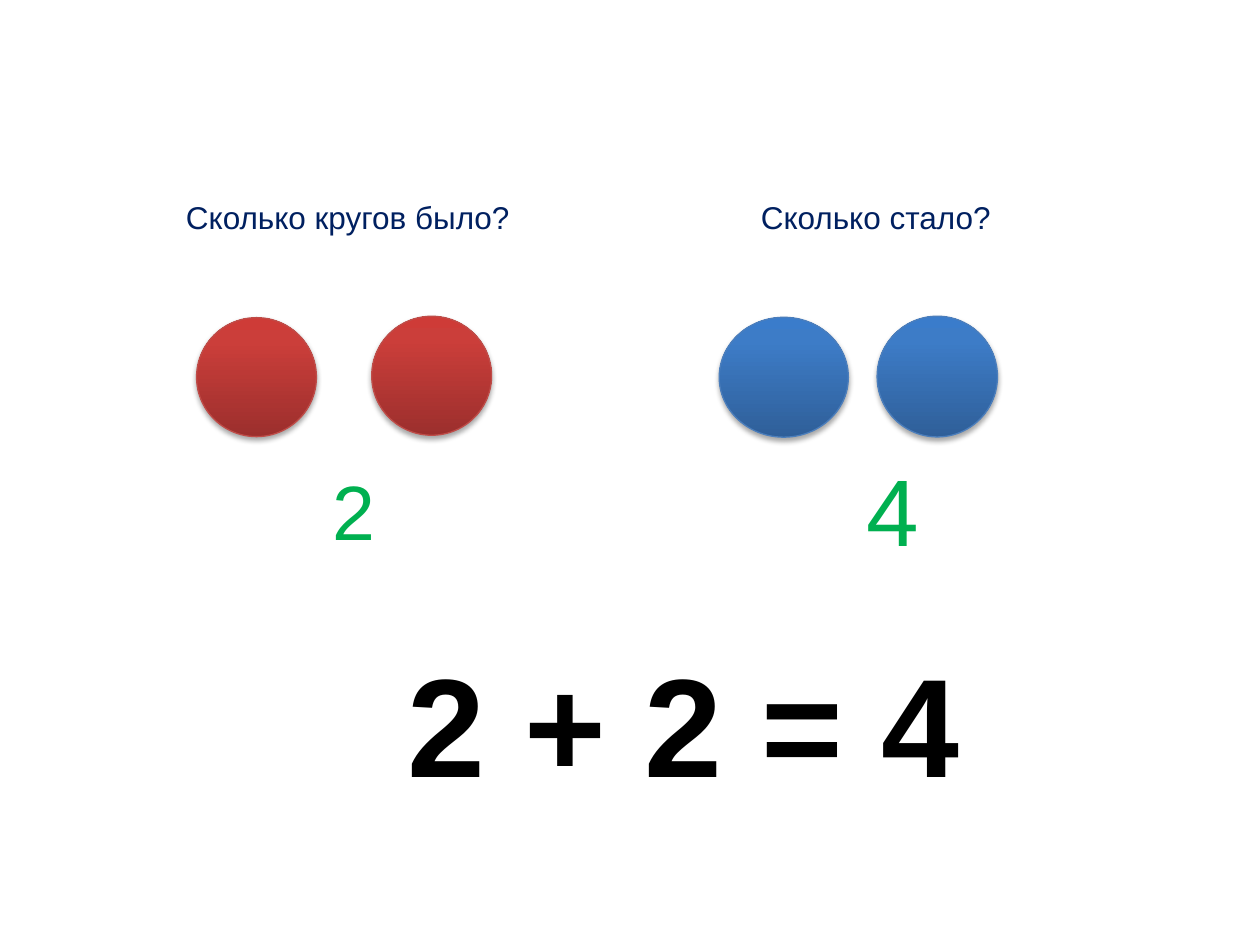
from copy import deepcopy

from pptx import Presentation
from pptx.dml.color import RGBColor
from pptx.enum.shapes import MSO_SHAPE
from pptx.enum.text import MSO_AUTO_SIZE, PP_ALIGN
from pptx.oxml import parse_xml
from pptx.oxml.ns import nsdecls, qn
from pptx.util import Pt

# Gradient colours from bottom to top, then the outline
RED = (("9C2F2D", "CB3E3A", "CE3B37"), "BF4C48")
BLUE = (("2F5F99", "3D7CC7", "3A7CCB"), "4B7EBC")
STOP_POSITIONS = (0, 0.8, 1)
NAVY, GREEN, BLACK = "002060", "00B050", "000000"


def colour(value):
    return RGBColor.from_string(value)


def fill_gradient(shape, colours):
    shape.fill.gradient()
    shape.fill.gradient_angle = 90
    # The default gradient has two stops; add a third
    stop_list = shape._element.spPr.find(qn("a:gradFill")).find(qn("a:gsLst"))
    stop_list.append(deepcopy(stop_list[-1]))
    stops = shape.fill.gradient_stops
    for stop, position, value in zip(stops, STOP_POSITIONS, colours):
        stop.position = position
        stop.color.rgb = colour(value)


def add_soft_shadow(shape):
    shape.shadow.inherit = False
    effects = shape._element.spPr.find(qn("a:effectLst"))
    effects.append(parse_xml(
        f'<a:outerShdw {nsdecls("a")} blurRad="{Pt(3.1)}" dist="{Pt(1.8)}" '
        'dir="5400000" rotWithShape="0"><a:srgbClr val="000000">'
        '<a:alpha val="35000"/></a:srgbClr></a:outerShdw>'))


def add_circle(shapes, left, top, width, height, palette):
    colours, outline = palette
    circle = shapes.add_shape(
        MSO_SHAPE.OVAL, Pt(left), Pt(top), Pt(width), Pt(height))
    fill_gradient(circle, colours)
    circle.line.color.rgb = colour(outline)
    circle.line.width = Pt(0.75)
    add_soft_shadow(circle)


def add_label(slide, text, box, size, text_colour, wrap=False, bold=False,
              alignment=PP_ALIGN.LEFT):
    shape = slide.shapes.add_textbox(*(Pt(length) for length in box))
    text_frame = shape.text_frame
    text_frame.text = text
    text_frame.word_wrap = wrap
    text_frame.auto_size = MSO_AUTO_SIZE.SHAPE_TO_FIT_TEXT
    paragraph = text_frame.paragraphs[0]
    paragraph.alignment = alignment
    font = paragraph.runs[0].font
    font.name = "Arial"
    font.size = Pt(size)
    font.bold = bold
    font.color.rgb = colour(text_colour)


def main():
    presentation = Presentation()
    presentation.slide_width, presentation.slide_height = Pt(720), Pt(540)
    slide = presentation.slides.add_slide(presentation.slide_layouts[6])

    # Circles: a red group on the left, two blue ones on the right
    red_group = slide.shapes.add_group_shape()
    add_circle(red_group.shapes, 112.3, 181.5, 68.5, 68, RED)
    add_circle(red_group.shapes, 212.4, 180.7, 68.5, 68, RED)
    add_circle(slide.shapes, 411, 181.3, 73.8, 68.5, BLUE)
    add_circle(slide.shapes, 501.2, 180.7, 68.8, 69, BLUE)

    # Questions
    add_label(slide, "Сколько кругов было?", (99.2, 109.4, 201.6, 29), 18, NAVY)
    add_label(slide, "Сколько стало?", (427.7, 109.4, 146.9, 29), 18, NAVY)

    # Answers
    add_label(slide, "2", (182.9, 261.4, 39.6, 60.5), 44, GREEN)
    add_label(slide, "4", (488.2, 254.9, 44.6, 72.7), 54, GREEN)

    # Equation
    add_label(slide, "2 + 2 = 4", (121.7, 360.7, 538.6, 104.4), 80, BLACK,
              wrap=True, bold=True, alignment=PP_ALIGN.CENTER)

    presentation.save("out.pptx")


if __name__ == "__main__":
    main()
